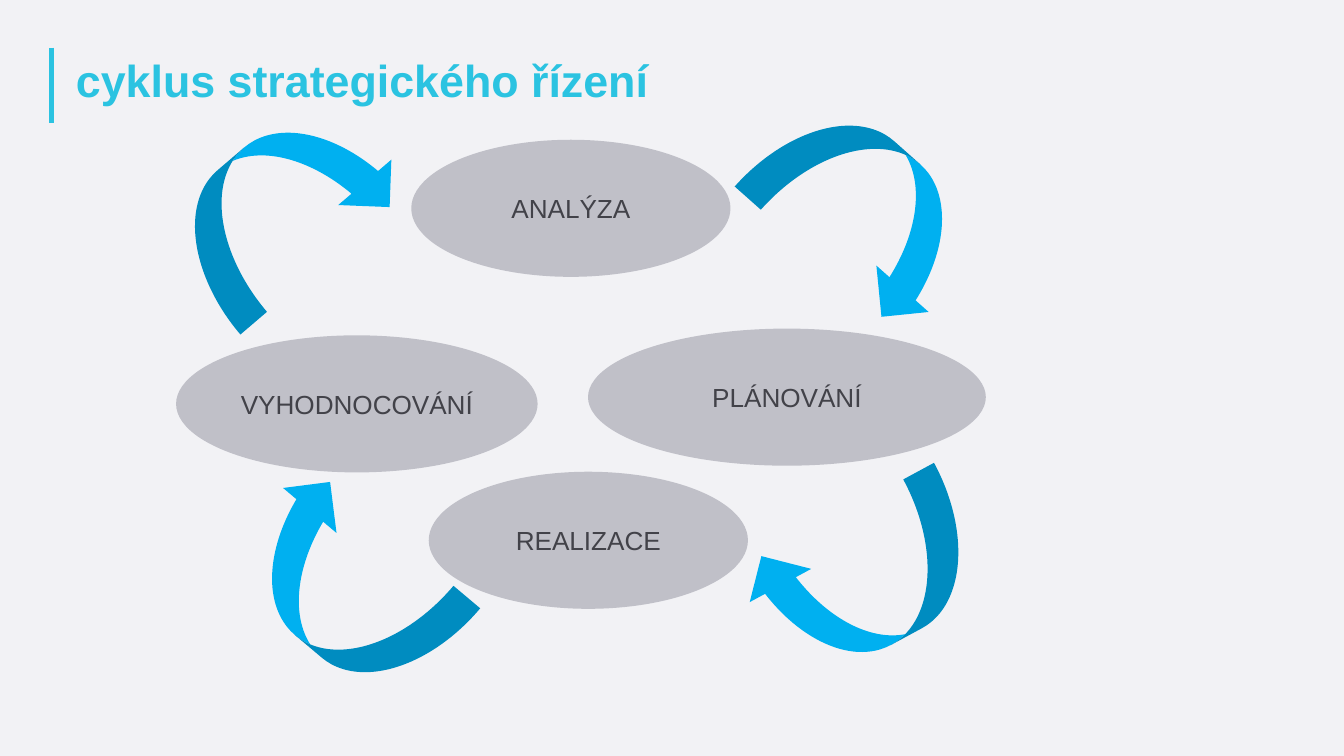
import pptx
import pptx.util
import pptx.dml.color
import pptx.enum.shapes
import pptx.enum.text
from pptx.util import Inches, Pt

Kind = pptx.enum.shapes.MSO_SHAPE
Align = pptx.enum.text.PP_ALIGN
Anchor = pptx.enum.text.MSO_ANCHOR

THEME = {
    "font": "Arial", "back": "F2F2F5", "accent": "2BC3E1",
    "arrow": "00B0F0", "oval": "C0C0C8", "text": "424249",
    "title": 48, "label": 28, "rule": 5,
}

TITLE = "cyklus strategického řízení"
OVAL_H = 2.04
STEPS = [  # text, left, top, width
    ("ANALÝZA", 6.12, 2.08, 4.75),
    ("PLÁNOVÁNÍ", 8.75, 4.89, 5.92),
    ("REALIZACE", 6.38, 7.02, 4.75),
    ("VYHODNOCOVÁNÍ", 2.62, 4.99, 5.38),
]
ARROW_W, ARROW_H = 2.08, 3.44
ARROWS = [  # left, top, turn in degrees
    (11.87, 1.42, 311.6),
    (4.12, 7.02, 130.1),
    (3.17, 1.35, 229.5),
    (11.84, 6.9, 61.6),
]


def color(name):
    return pptx.dml.color.RGBColor.from_string(THEME[name])


def write(shape, text, size, ink, bold=False, align=Align.LEFT, space=1.0):
    frame = shape.text_frame
    frame.word_wrap = True
    frame.auto_size = pptx.enum.text.MSO_AUTO_SIZE.NONE
    frame.vertical_anchor = Anchor.MIDDLE
    frame.margin_left = frame.margin_right = Inches(0.1)
    frame.margin_top = frame.margin_bottom = Inches(0.05)
    para = frame.paragraphs[0]
    para.alignment = align
    para.line_spacing = space
    run = para.add_run()
    run.text = text
    run.font.name = THEME["font"]
    run.font.size = Pt(THEME[size])
    run.font.bold = bold
    run.font.color.rgb = color(ink)


def draw(slide, kind, box, fill):
    shape = slide.shapes.add_shape(kind, *map(Inches, box))
    shape.shadow.inherit = False
    shape.fill.solid()
    shape.fill.fore_color.rgb = color(fill)
    shape.line.fill.background()
    return shape


def add_head(slide):
    rule = slide.shapes.add_connector(
        pptx.enum.shapes.MSO_CONNECTOR.STRAIGHT,
        Inches(0.77), Inches(0.71), Inches(0.77), Inches(1.83))
    rule.line.color.rgb = color("accent")
    rule.line.width = Pt(THEME["rule"])
    pptx.oxml.xmlchemy.OxmlElement  # effect list keeps the rule flat
    rule._element.spPr.append(pptx.oxml.xmlchemy.OxmlElement("a:effectLst"))

    title = slide.shapes.title
    title.left, title.top = Inches(1.03), Inches(0.88)
    title.width, title.height = Inches(18.97), Inches(0.71)
    write(title, TITLE, "title", "accent", bold=True, space=0.9)


def main():
    deck = pptx.Presentation()
    deck.slide_width, deck.slide_height = Inches(20), Inches(11.25)
    slide = deck.slides.add_slide(deck.slide_layouts[5])
    slide.background.fill.solid()
    slide.background.fill.fore_color.rgb = color("back")

    add_head(slide)
    for left, top, turn in ARROWS:
        arrow = draw(slide, Kind.CURVED_LEFT_ARROW,
                     (left, top, ARROW_W, ARROW_H), "arrow")
        arrow.rotation = turn
    for text, left, top, width in STEPS:
        oval = draw(slide, Kind.OVAL, (left, top, width, OVAL_H), "oval")
        write(oval, text, "label", "text", align=Align.CENTER)

    deck.save("out.pptx")


if __name__ == "__main__":
    main()
